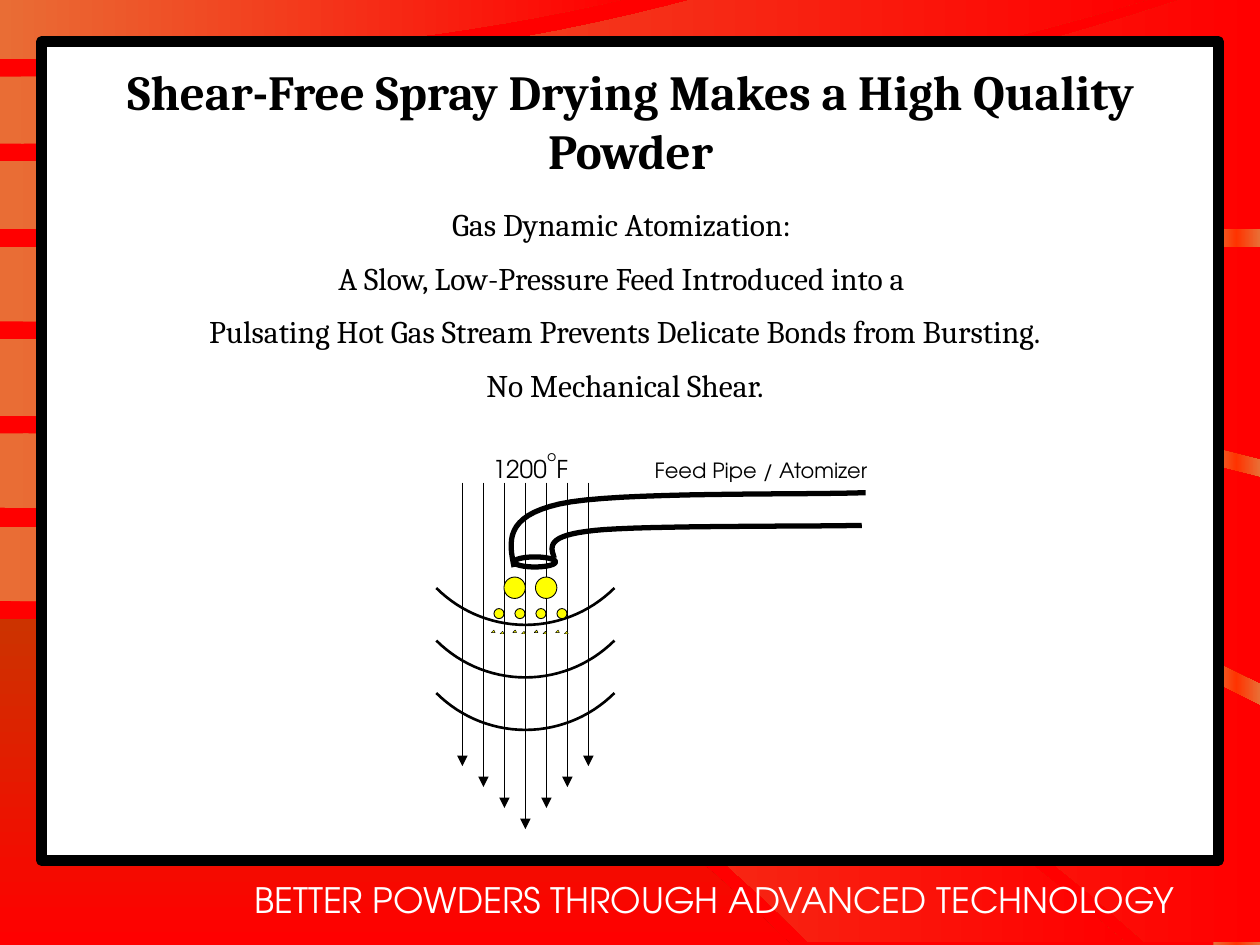
"""Build the spray drying slide: striped red frame, heading and atomizer diagram."""
import copy
import math
from dataclasses import dataclass
from typing import Optional

import pptx
import pptx.dml.color
import pptx.enum.shapes
import pptx.enum.text
import pptx.oxml
import pptx.oxml.ns
import pptx.util

Inches, Pt = pptx.util.Inches, pptx.util.Pt
RGBColor = pptx.dml.color.RGBColor
MSO_SHAPE = pptx.enum.shapes.MSO_SHAPE
MSO_ANCHOR = pptx.enum.text.MSO_ANCHOR
Point = tuple[float, float]

BLACK = RGBColor(0x00, 0x00, 0x00)
WHITE = RGBColor(0xFF, 0xFF, 0xFF)
RED = RGBColor(0xFF, 0x00, 0x00)
SCARLET = RGBColor(0xFF, 0x33, 0x00)
RUST = RGBColor(0xCC, 0x33, 0x00)
ORANGE = RGBColor(0xE9, 0x6D, 0x35)
YELLOW = RGBColor(0xFF, 0xFF, 0x00)
SERIF, SANS = "Cambria", "TeX Gyre Adventor"
STREAM_X = 4.17


@dataclass(frozen=True)
class Edge:
    start_y: float
    end_x: float
    end_y: float

    def trace(self, steps: int = 20, bend: float = 2.4) -> list[Point]:
        """Sample the power curve that leaves the left side level."""
        return [(self.end_x * step / steps,
                 self.start_y + (self.end_y - self.start_y) * (step / steps) ** bend)
                for step in range(steps + 1)]


@dataclass(frozen=True)
class Ribbon:
    upper: Edge
    lower: Edge
    colors: tuple[RGBColor, ...] = (ORANGE, RED)
    angle: int = 0

    def outline(self) -> list[Point]:
        """Join both edges through the corner on the right."""
        near, far = sorted((self.upper, self.lower), key=lambda edge: edge.end_x)
        return [*self.upper.trace(), (far.end_x, near.end_y), *reversed(self.lower.trace())]


RIBBONS = (
    Ribbon(Edge(4.91, 6.28, 7.5), Edge(7.5, 0, 7.5), (RUST, RED), 270),
    Ribbon(Edge(4.18, 8.93, 7.48), Edge(4.77, 6.42, 7.48)),
    Ribbon(Edge(3.44, 10, 5.6), Edge(4.03, 9.09, 7.48)),
    Ribbon(Edge(2.69, 10, 3.79), Edge(3.3, 10, 5.42)),
    Ribbon(Edge(1.96, 10, 1.96), Edge(2.55, 10, 3.64)),
    Ribbon(Edge(1.28, 9.43, -0.02), Edge(1.82, 10, 1.82)),
    Ribbon(Edge(0.61, 5.56, -0.02), Edge(1.14, 9.17, -0.02)),
    Ribbon(Edge(-0.02, 5.01, -0.02), Edge(0.47, 5.01, -0.02)),
)
PIPE_WALLS = (
    ((4.08, 4.5), (4.04, 4.3), (4, 4.1), (4.44, 4), (4.88, 3.9), (6.38, 3.93), (6.87, 3.91)),
    ((4.4, 4.43), (4.37, 4.34), (4.33, 4.25), (4.72, 4.21), (5.1, 4.17), (6.41, 4.18),
     (6.84, 4.17)),
)


def trace_curve(controls: tuple[Point, ...], steps: int = 16) -> list[Point]:
    """Sample a chain of cubic curves."""
    points = [controls[0]]
    for first in range(0, len(controls) - 1, 3):
        segment = controls[first:first + 4]
        for step in range(1, steps + 1):
            t = step / steps
            weights = [math.comb(3, k) * t ** k * (1 - t) ** (3 - k) for k in range(4)]
            points.append(tuple(sum(w * point[axis] for w, point in zip(weights, segment))
                                for axis in (0, 1)))
    return points


def trace_wave(center_y: float, steps: int = 30) -> list[Point]:
    """Sample the lower quarter of a circle of one inch radius."""
    angles = [math.pi / 4 * (1 + 2 * step / steps) for step in range(steps + 1)]
    return [(STREAM_X + math.cos(angle), center_y + math.sin(angle)) for angle in angles]


def style(shape, fill: Optional[RGBColor] = None, line_width: float = 0) -> None:
    """Set a flat fill and a black outline, or none of them."""
    shape.shadow.inherit = False
    if fill is None:
        shape.fill.background()
    else:
        shape.fill.solid()
        shape.fill.fore_color.rgb = fill
    if line_width:
        shape.line.color.rgb = BLACK
        shape.line.width = Pt(line_width)
    else:
        shape.line.fill.background()


def paint_gradient(shape, colors: tuple[RGBColor, ...], angle: int) -> None:
    """Fill a shape with evenly spaced gradient colours."""
    shape.fill.gradient()
    shape.fill.gradient_angle = angle
    stop_list = shape._element.spPr.find(".//" + pptx.oxml.ns.qn("a:gsLst"))
    while len(stop_list) < len(colors):
        stop_list.append(copy.deepcopy(stop_list[0]))
    for index, (stop, color) in enumerate(zip(shape.fill.gradient_stops, colors)):
        stop.position = index / (len(colors) - 1)
        stop.color.rgb = color


def add_outline(page, points: list[Point], closed: bool = False, **look):
    """Draw a freeform through points given in inches."""
    corners = [(Inches(x), Inches(y)) for x, y in points]
    builder = page.shapes.build_freeform(*corners[0])
    builder.add_line_segments(corners[1:], close=closed)
    shape = builder.convert_to_shape()
    style(shape, **look)
    return shape


def add_preset(page, kind, left: float, top: float, width: float, height: float, **look):
    """Draw a preset shape placed in inches."""
    shape = page.shapes.add_shape(kind, Inches(left), Inches(top), Inches(width), Inches(height))
    style(shape, **look)
    return shape


def add_arrow(page, x: float, top: float, bottom: float) -> None:
    """Draw a downward gas stream arrow."""
    arrow = page.shapes.add_connector(pptx.enum.shapes.MSO_CONNECTOR.STRAIGHT,
                                      Inches(x), Inches(top), Inches(x), Inches(bottom))
    arrow.line.color.rgb = BLACK
    arrow.line.width = Pt(1)
    properties, space = arrow._element.spPr, pptx.oxml.ns.nsdecls("a")
    properties.get_or_add_ln().append(
        pptx.oxml.parse_xml(f'<a:tailEnd {space} type="triangle"/>'))
    properties.append(pptx.oxml.parse_xml(f"<a:effectLst {space}/>"))


def add_text(page, text: str, left: float, top: float, width: float, height: float, *, size: float,
             font: str = SANS, color: RGBColor = BLACK, bold: bool = False,
             anchor=MSO_ANCHOR.TOP, raised: str = "") -> None:
    """Write centred lines, raising the one run that equals raised."""
    box = page.shapes.add_textbox(Inches(left), Inches(top), Inches(width), Inches(height))
    box.text_frame.word_wrap = True
    box.text_frame.vertical_anchor = anchor
    for index, line in enumerate(text.split("\n")):
        para = box.text_frame.add_paragraph() if index else box.text_frame.paragraphs[0]
        para.alignment = pptx.enum.text.PP_ALIGN.CENTER
        para.space_before = Pt(size / 2 if index else 0)
        for part in line.partition(raised) if raised else (line,):
            span = para.add_run()
            span.text = part
            span.font.name, span.font.size, span.font.bold = font, Pt(size), bold
            span.font.color.rgb = color
            if part == raised:
                span._r.get_or_add_rPr().set("baseline", "70000")


def main() -> None:
    """Build and save the deck."""
    deck = pptx.Presentation()
    deck.slide_width, deck.slide_height = Inches(10), Inches(7.5)
    page = deck.slides.add_slide(deck.slide_layouts[6])
    page.background.fill.solid()
    page.background.fill.fore_color.rgb = RED

    side = add_preset(page, MSO_SHAPE.RECTANGLE, 9.63, 0, 0.37, 7.5)
    paint_gradient(side, (ORANGE, SCARLET, ORANGE), 0)
    for ribbon in RIBBONS:
        band = add_outline(page, ribbon.outline(), closed=True)
        paint_gradient(band, ribbon.colors, ribbon.angle)
    add_text(page, "BETTER POWDERS THROUGH ADVANCED TECHNOLOGY", 1.67, 6.92, 8, 0.43,
             size=20, color=WHITE)
    add_preset(page, MSO_SHAPE.RECTANGLE, 0.33, 0.33, 9.34, 6.5, fill=WHITE, line_width=6)

    add_text(page, "Shear-Free Spray Drying Makes a High Quality Powder", 0.67, 0.33, 8.67, 1.25,
             size=28, font=SERIF, bold=True, anchor=MSO_ANCHOR.MIDDLE)
    add_text(page, "Gas Dynamic Atomization: \nA Slow, Low-Pressure Feed Introduced into a \n"
             "Pulsating Hot Gas Stream Prevents Delicate Bonds from Bursting.\n"
             "No Mechanical Shear.", 0.92, 1.58, 8.08, 1.76, size=18, font=SERIF)

    for wall in PIPE_WALLS:
        add_outline(page, trace_curve(wall), line_width=3)
    add_preset(page, MSO_SHAPE.OVAL, 4.08, 4.42, 0.33, 0.08, fill=WHITE, line_width=3)
    add_text(page, "Feed Pipe / Atomizer", 4.83, 3.58, 2.42, 0.31, size=12)
    for step in range(-3, 4):
        add_arrow(page, STREAM_X + step / 6, 3.83, 6.58 - abs(step) / 6)
    add_text(page, "1200oF", 3.67, 3.5, 1.08, 0.34, size=14, raised="o")
    for row in range(3):
        add_outline(page, trace_wave(3.96 + row * 5 / 12), line_width=1.5)
    for left in (4, 4.25):
        add_preset(page, MSO_SHAPE.OVAL, left, 4.58, 0.17, 0.17, fill=YELLOW, line_width=0.5)
    for step in range(4):
        add_preset(page, MSO_SHAPE.OVAL, 3.92 + step / 6, 4.83, 0.08, 0.08,
                   fill=YELLOW, line_width=0.5)
        for second in range(2):
            x, y = 3.9 + step * 0.17 + second * 0.07, 5 + second * 0.01
            add_outline(page, [(x + 0.02, y), (x + 0.03, y + 0.02), (x, y + 0.02)], closed=True,
                        fill=YELLOW, line_width=0.25)
    deck.save("out.pptx")


if __name__ == "__main__":
    main()
